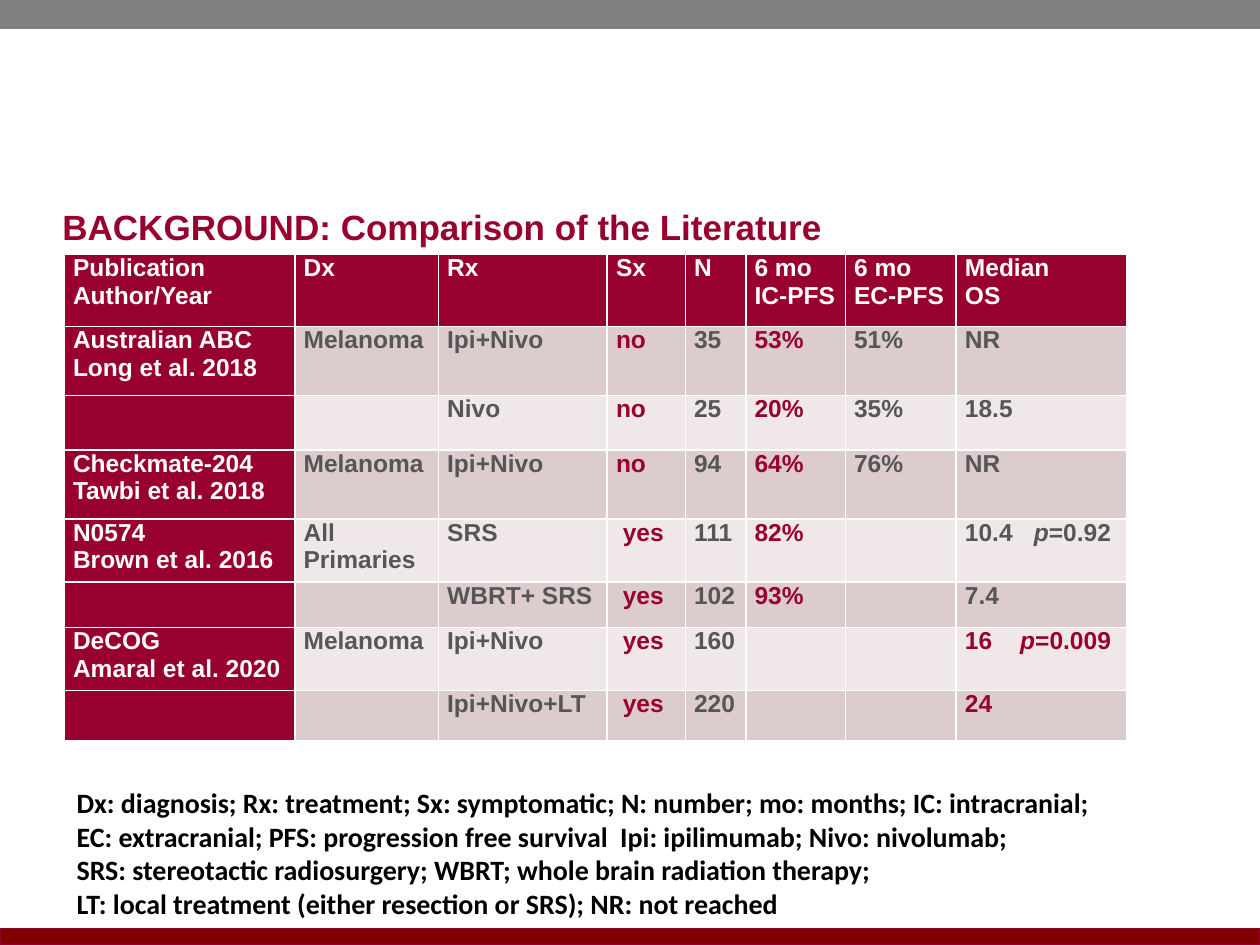
from lxml import etree
from pptx import Presentation
from pptx.dml.color import RGBColor
from pptx.enum import shapes, text
from pptx.oxml import ns
from pptx.util import Inches, Pt

CRIMSON = RGBColor(0x98, 0x01, 0x2E)
EDGE = RGBColor(0x96, 0x00, 0x2D)
MAROON = RGBColor(0x80, 0x00, 0x00)
GRAY = RGBColor(0x80, 0x80, 0x80)
SLATE = RGBColor(0x56, 0x56, 0x56)
ROSE = RGBColor(0xDD, 0xCC, 0xCD)
PALE = RGBColor(0xEF, 0xE7, 0xE8)
WHITE = RGBColor(0xFF, 0xFF, 0xFF)
BLACK = RGBColor(0x00, 0x00, 0x00)

COLUMN_WIDTHS = [1.83, 1.14, 1.34, 0.62, 0.48, 0.79, 0.88, 1.35]
ROW_HEIGHTS = [0.57, 0.55, 0.43, 0.55, 0.5, 0.36, 0.5, 0.4]
STUDY, SYMPTOMS, IC_PFS, SURVIVAL = 0, 3, 5, 7
FIRST_DECOG_ROW = 6
P_VALUE_TAB = 1.16

STUDIES = [
    ["Publication\nAuthor/Year", "Dx", "Rx", "Sx", "N",
     "6 mo\nIC-PFS", "6 mo\nEC-PFS", "Median\nOS"],
    ["Australian ABC Long et al. 2018", "Melanoma", "Ipi+Nivo", "no", "35",
     "53%", "51%", "NR"],
    ["", "", "Nivo", "no", "25", "20%", "35%", "18.5"],
    ["Checkmate-204 Tawbi et al. 2018", "Melanoma", "Ipi+Nivo", "no", "94",
     "64%", "76%", "NR"],
    ["N0574\nBrown et al. 2016", "All\nPrimaries", "SRS", " yes", "111",
     "82%", "", "10.4\tp=0.92"],
    ["", "", "WBRT+ SRS", " yes", "102", "93%", "", "7.4"],
    ["DeCOG\nAmaral et al. 2020", "Melanoma", "Ipi+Nivo", " yes", "160",
     "", "", "16\tp=0.009"],
    ["", "", "Ipi+Nivo+LT", " yes", "220", "", "", "24"],
]

ABBREVIATIONS = [
    "Dx: diagnosis; Rx: treatment; Sx: symptomatic; N: number; mo: months; IC: intracranial;",
    "EC: extracranial; PFS: progression free survival  Ipi: ipilimumab; Nivo: nivolumab;",
    "SRS: stereotactic radiosurgery; WBRT; whole brain radiation therapy;",
    "LT: local treatment (either resection or SRS); NR: not reached",
]


def set_font(paragraph, name, size, color):
    font = paragraph.font
    font.name, font.size, font.bold = name, Pt(size), True
    font.color.rgb = color


def add_band(slide, top, height, color):
    band = slide.shapes.add_shape(shapes.MSO_SHAPE.RECTANGLE, 0, Inches(top),
                                  Inches(10), Inches(height))
    band.shadow.inherit = False
    band.fill.solid()
    band.fill.fore_color.rgb = color
    band.line.fill.background()
    return band


def add_edge_and_shadow(band):
    band.line.color.rgb = EDGE
    band.line.width = Pt(0.75)
    effects = band.element.spPr.find(ns.qn("a:effectLst"))
    shadow = etree.SubElement(effects, ns.qn("a:outerShdw"), blurRad=str(Pt(3.1)),
                              dist=str(Pt(1.8)), dir="5400000", rotWithShape="0")
    color = etree.SubElement(shadow, ns.qn("a:srgbClr"), val=str(BLACK))
    etree.SubElement(color, ns.qn("a:alpha"), val="35000")


def add_text(slide, box, lines, name, size, color, align, anchor, wrap):
    frame = slide.shapes.add_textbox(*map(Inches, box)).text_frame
    frame.word_wrap = wrap
    frame.vertical_anchor = anchor
    frame.text = "\n".join(lines)
    for paragraph in frame.paragraphs:
        paragraph.alignment = align
        set_font(paragraph, name, size, color)


def add_p_value(paragraph, content):
    survival, p_value = content.split("\t")
    for part in (survival + "\t", p_value[0], p_value[1:]):
        run = paragraph.add_run()
        run.text = part
        if part == "p":
            run.font.italic = True
    stops = etree.SubElement(paragraph._p.get_or_add_pPr(), ns.qn("a:tabLst"))
    etree.SubElement(stops, ns.qn("a:tab"), pos=str(Inches(P_VALUE_TAB)), algn="r")


def cell_colors(row, column):
    if row == 0 or column == STUDY:
        return CRIMSON, WHITE
    stressed = (column in (SYMPTOMS, IC_PFS)
                or column == SURVIVAL and row >= FIRST_DECOG_ROW)
    return (ROSE if row % 2 else PALE), (CRIMSON if stressed else SLATE)


def fill_cell(cell, content, background, color):
    cell.margin_left = cell.margin_right = Inches(0.07)
    cell.margin_top = cell.margin_bottom = 0
    cell.fill.solid()
    cell.fill.fore_color.rgb = background
    frame = cell.text_frame
    if "\t" in content:
        add_p_value(frame.paragraphs[0], content)
    else:
        frame.text = content
    for paragraph in frame.paragraphs:
        set_font(paragraph, "Arial", 14, color)


def add_study_table(slide):
    table = slide.shapes.add_table(
        len(ROW_HEIGHTS), len(COLUMN_WIDTHS), Inches(0.51), Inches(2.02),
        Inches(sum(COLUMN_WIDTHS)), Inches(sum(ROW_HEIGHTS))).table
    for column, width in zip(table.columns, COLUMN_WIDTHS):
        column.width = Inches(width)
    for row, height in zip(table.rows, ROW_HEIGHTS):
        row.height = Inches(height)
    for r, study in enumerate(STUDIES):
        for c, content in enumerate(study):
            fill_cell(table.cell(r, c), content, *cell_colors(r, c))


def main():
    deck = Presentation()
    deck.slide_width, deck.slide_height = Inches(10), Inches(7.5)
    slide = deck.slides.add_slide(deck.slide_layouts[6])
    add_band(slide, 0, 0.23, GRAY)
    add_edge_and_shadow(add_band(slide, 7.37, 0.13, MAROON))
    add_study_table(slide)
    add_text(slide, (0.51, 5.97, 8.66, 1.38), ABBREVIATIONS, "Calibri", 16, BLACK,
             text.PP_ALIGN.LEFT, text.MSO_ANCHOR.BOTTOM, True)
    add_text(slide, (0.37, 1.58, 6.28, 0.44), ["BACKGROUND: Comparison of the Literature"],
             "Arial", 20, CRIMSON, text.PP_ALIGN.CENTER, text.MSO_ANCHOR.TOP, False)
    deck.save("out.pptx")


if __name__ == "__main__":
    main()
